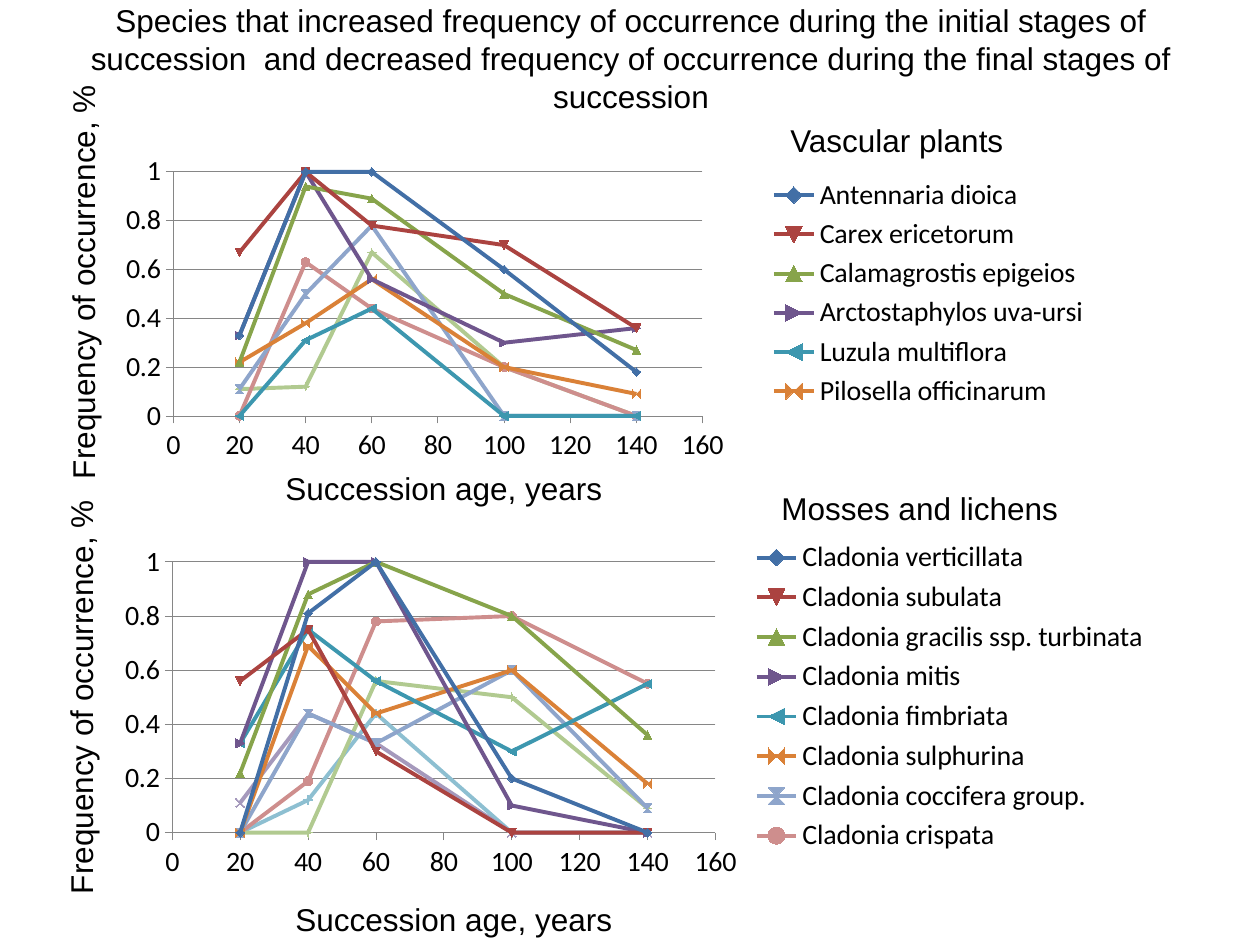
from lxml import etree
from pptx import Presentation
from pptx.chart.data import XyChartData
from pptx.dml.color import RGBColor
from pptx.enum.chart import XL_CHART_TYPE, XL_LEGEND_POSITION, XL_TICK_MARK
from pptx.enum.text import MSO_ANCHOR, PP_ALIGN
from pptx.oxml.ns import qn
from pptx.util import Emu, Pt

LINES = XL_CHART_TYPE.XY_SCATTER_LINES
RIGHT = XL_LEGEND_POSITION.RIGHT
OUTSIDE = XL_TICK_MARK.OUTSIDE
MIDDLE = MSO_ANCHOR.MIDDLE
CENTER = PP_ALIGN.CENTER
PX = 914400 // 126

THEME = {
    "text": "000000", "grid": "868686",
    "head": "Arial", "body": "Calibri",
    "head_pt": 18, "body_pt": 16, "line_pt": 2.25, "grid_pt": 0.5, "mark": 5,
    "series": ["426FA6", "AB4340", "87A44B", "6F568D", "3D97AF", "DA8137",
               "8EA5CB", "CE8E8D", "B1CA90", "A599BC", "8DBFD1"],
}

TITLE = ("Species that increased frequency of occurrence during the initial "
         "stages of succession  and decreased frequency of occurrence during "
         "the final stages of succession")
TITLE_BOX = (64, 0, 1134, 116)

AGES = [140, 100, 60, 40, 20]
# The legend lists the named lines only.
PLANTS = [
    ("Antennaria dioica", [0.18, 0.6, 1, 1, 0.33]),
    ("Carex ericetorum", [0.36, 0.7, 0.78, 1, 0.67]),
    ("Calamagrostis epigeios", [0.27, 0.5, 0.89, 0.94, 0.22]),
    ("Arctostaphylos uva-ursi", [0.36, 0.3, 0.56, 1, 0.33]),
    ("Luzula multiflora", [0, 0, 0.44, 0.31, 0]),
    ("Pilosella officinarum", [0.09, 0.2, 0.56, 0.38, 0.22]),
    ("", [0, 0, 0.78, 0.5, 0.11]),
    ("", [0, 0.2, 0.44, 0.63, 0]),
    ("", [0, 0.2, 0.67, 0.12, 0.11]),
]
MOSSES = [
    ("Cladonia verticillata", [0, 0.2, 1, 0.81, 0]),
    ("Cladonia subulata", [0, 0, 0.3, 0.75, 0.56]),
    ("Cladonia gracilis ssp. turbinata", [0.36, 0.8, 1, 0.88, 0.22]),
    ("Cladonia mitis", [0, 0.1, 1, 1, 0.33]),
    ("Cladonia fimbriata", [0.55, 0.3, 0.56, 0.75, 0.33]),
    ("Cladonia sulphurina", [0.18, 0.6, 0.44, 0.69, 0]),
    ("Cladonia coccifera group.", [0.09, 0.6, 0.33, 0.44, 0]),
    ("Cladonia crispata", [0.55, 0.8, 0.78, 0.19, 0]),
    ("", [0.09, 0.5, 0.56, 0, 0]),
    ("", [0, 0, 0.33, 0.44, 0.11]),
    ("", [0, 0, 0.44, 0.12, 0]),
]

# Plot and legend places are px on the slide.
CHARTS = [
    {"rows": PLANTS, "box": (84, 155, 1131, 307),
     "plot": (173, 171, 529, 247), "legend": (765, 172)},
    {"rows": MOSSES, "box": (79, 512, 1181, 403),
     "plot": (172, 562, 543, 271), "legend": (748, 535)},
]

AGE = "Succession age, years"
FREQ = "Frequency of occurrence, %"
LABELS = [
    ("Vascular plants", (778, 115, 241, 51), 0),
    ("Mosses and lichens", (769, 483, 305, 51), 0),
    (AGE, (273, 463, 345, 51), 0),
    (AGE, (283, 894, 345, 51), 0),
    (FREQ, (-129, 254, 424, 51), 270),
    (FREQ, (-131, 669, 424, 51), 270),
]


def color(name):
    return RGBColor.from_string(name)


def scale(box):
    return [Emu(n * PX) for n in box]


def style(font, kind):
    looks = {"name": THEME[kind], "size": Pt(THEME[kind + "_pt"]), "bold": False}
    for key, value in looks.items():
        setattr(font, key, value)
    font.color.rgb = color(THEME["text"])


def stroke(line, name, width):
    line.color.rgb = color(name)
    line.width = Pt(width)


def layout(parent, index, place, box, inner=False):
    """Give a chart part a manual layout, as shares of the chart's box."""
    old = parent.find(qn("c:layout"))
    if old is not None:
        parent.remove(old)
    node = etree.Element(qn("c:layout"))
    manual = etree.SubElement(node, qn("c:manualLayout"))
    left, top, wide, high = box
    shares = [(place[0] - left) / wide, (place[1] - top) / high]
    shares += [n / side for n, side in zip(place[2:], (wide, high))]
    items = [("layoutTarget", "inner")] if inner else []
    items += [("xMode", "edge"), ("yMode", "edge")]
    items += [(key, f"{n:.3f}") for key, n in zip("xywh", shares)]
    for key, value in items:
        etree.SubElement(manual, qn("c:" + key)).set("val", value)
    parent.insert(index, node)


def add_legend(chart, spec):
    chart.has_legend = True
    legend = chart.legend
    legend.position = RIGHT
    legend.include_in_layout = False
    style(legend.font, "body")
    root = legend._element
    bare = [n for n, (name, _) in enumerate(spec["rows"]) if not name]
    for spot, number in enumerate(bare, 1):
        entry = etree.Element(qn("c:legendEntry"))
        etree.SubElement(entry, qn("c:idx")).set("val", str(number))
        etree.SubElement(entry, qn("c:delete")).set("val", "1")
        root.insert(spot, entry)
    layout(root, 1 + len(bare), spec["legend"], spec["box"])


def add_chart(slide, spec):
    data = XyChartData()
    for name, values in spec["rows"]:
        row = data.add_series(name)
        for age, value in zip(AGES, values):
            row.add_data_point(age, value)
    chart = slide.shapes.add_chart(LINES, *scale(spec["box"]), data).chart
    chart.has_title = False
    style(chart.font, "body")
    chart.plots[0].vary_by_categories = False

    for row, name in zip(chart.plots[0].series, THEME["series"]):
        row.smooth = False
        stroke(row.format.line, name, THEME["line_pt"])
        row.marker.size = THEME["mark"]
        row.marker.format.fill.solid()
        row.marker.format.fill.fore_color.rgb = color(name)
        stroke(row.marker.format.line, name, THEME["grid_pt"])

    for axis, top, step in ((chart.category_axis, 160, 20),
                            (chart.value_axis, 1, 0.2)):
        looks = {"minimum_scale": 0, "maximum_scale": top, "major_unit": step,
                 "major_tick_mark": OUTSIDE, "has_major_gridlines": step < 1}
        for key, value in looks.items():
            setattr(axis, key, value)
        axis.tick_labels.number_format = "General"
        axis.tick_labels.number_format_is_linked = False
        style(axis.tick_labels.font, "body")
        stroke(axis.format.line, THEME["grid"], THEME["grid_pt"])
    stroke(chart.value_axis.major_gridlines.format.line,
           THEME["grid"], THEME["grid_pt"])

    add_legend(chart, spec)
    area = chart._chartSpace.find(".//" + qn("c:plotArea"))
    layout(area, 0, spec["plot"], spec["box"], inner=True)


def add_label(slide, text, box, turn):
    shape = slide.shapes.add_textbox(*scale(box))
    shape.rotation = turn
    shape.text_frame.word_wrap = False
    para = shape.text_frame.paragraphs[0]
    para.text = text
    style(para.runs[0].font, "head")


def add_title(slide):
    shape = slide.shapes.title
    shape.left, shape.top, shape.width, shape.height = scale(TITLE_BOX)
    frame = shape.text_frame
    frame.text = TITLE
    frame.vertical_anchor = MIDDLE
    frame.paragraphs[0].alignment = CENTER
    style(frame.paragraphs[0].runs[0].font, "head")


def main():
    deck = Presentation()
    deck.slide_width, deck.slide_height = scale((1260, 945))
    slide = deck.slides.add_slide(deck.slide_layouts[5])
    add_title(slide)
    for spec in CHARTS:
        add_chart(slide, spec)
    for label in LABELS:
        add_label(slide, *label)
    deck.save("out.pptx")


if __name__ == "__main__":
    main()
